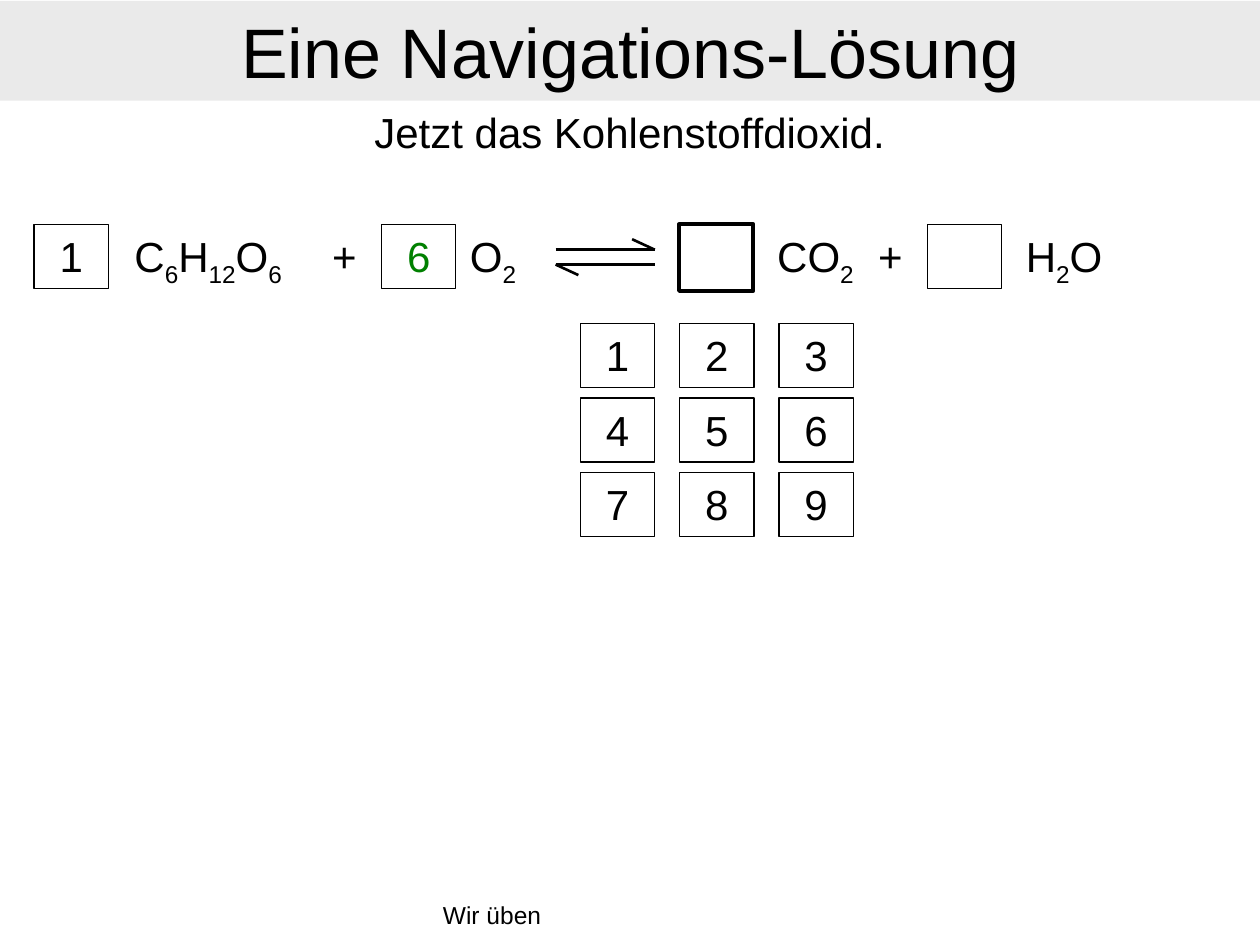
from dataclasses import dataclass
from itertools import groupby

from lxml import etree
from pptx import Presentation
from pptx.dml.color import RGBColor
from pptx.enum import shapes as sh, text as tx
from pptx.oxml import ns
from pptx.util import Pt


@dataclass(frozen=True)
class Theme:
    font: str = "Arial"
    ink: RGBColor = RGBColor(0, 0, 0)
    band: RGBColor = RGBColor(0xEA, 0xEA, 0xEA)
    right: RGBColor = RGBColor(0, 0x80, 0)
    head: int = 40
    body: int = 24
    foot: int = 14
    thin: float = 0.75
    arrow: float = 1.5
    bold: float = 2.25


THEME = Theme()
CELL_W, CELL_H = 42.5, 36.5
STEP_X, STEP_Y = 56.7, 42.5
CENTER, LEFT = tx.PP_ALIGN.CENTER, tx.PP_ALIGN.LEFT


def place(shape, box):
    shape.left, shape.top, shape.width, shape.height = map(Pt, box)


def style(frame, size, color=THEME.ink, align=CENTER):
    for par in frame.paragraphs:
        par.alignment = align
        for run in par.runs:
            run.font.name = THEME.font
            run.font.size = Pt(size)
            run.font.color.rgb = color


def add_text(slide, box, words, size=THEME.body, align=CENTER):
    frame = slide.shapes.add_textbox(*map(Pt, box)).text_frame
    frame.word_wrap = True
    frame.text = words
    style(frame, size, align=align)


def add_term(slide, box, term):
    """Write a chemical formula with its digits as subscripts."""
    frame = slide.shapes.add_textbox(*map(Pt, box)).text_frame
    frame.word_wrap = True
    for low, chars in groupby(term, str.isdigit):
        run = frame.paragraphs[0].add_run()
        run.text = "".join(chars)
        if low:
            run.font._element.set("baseline", "-25000")
    style(frame, THEME.body)


def add_cell(slide, box, digit="", color=THEME.ink, line=THEME.thin):
    cell = slide.shapes.add_shape(sh.MSO_SHAPE.RECTANGLE, *map(Pt, box))
    cell.shadow.inherit = False
    cell.fill.background()
    cell.line.color.rgb = THEME.ink
    cell.line.width = Pt(line)
    frame = cell.text_frame
    frame.vertical_anchor = tx.MSO_ANCHOR.TOP
    frame.text = digit
    style(frame, THEME.body, color)


def add_title(slide, box, words):
    title = slide.shapes.title
    place(title, box)
    title.fill.solid()
    title.fill.fore_color.rgb = THEME.band
    frame = title.text_frame
    frame.auto_size = tx.MSO_AUTO_SIZE.NONE
    frame.vertical_anchor = tx.MSO_ANCHOR.MIDDLE
    frame.text = words
    style(frame, THEME.head)


def add_arrows(slide, box):
    """Draw the two half arrows of a chemical equilibrium."""
    x, y, w, h = box
    barb, rise, end = 13, 6, x + w
    group = slide.shapes.add_group_shape()
    for ends in (
        (x, y + rise, end, y + rise),
        (end, y + rise, end - barb, y),
        (end, y + h - rise, x, y + h - rise),
        (x, y + h - rise, x + barb, y + h),
    ):
        line = group.shapes.add_connector(sh.MSO_CONNECTOR.STRAIGHT, *map(Pt, ends))
        line.line.color.rgb = THEME.ink
        line.line.width = Pt(THEME.arrow)
        etree.SubElement(line._element.spPr, ns.qn("a:effectLst"))


def add_sum(slide, box):
    """Lay out the reaction equation with its coefficient cells."""
    x, y, _, h = box
    for dx, digit, color, line, grow in (
        (0, "1", THEME.ink, THEME.thin, 0),
        (198.5, "6", THEME.right, THEME.thin, 0),
        (368.5, "", THEME.ink, THEME.bold, 1.5),
        (510.5, "", THEME.ink, THEME.thin, 0),
    ):
        add_cell(slide, (x + dx, y, CELL_W, h + grow), digit, color, line)
    for dx, w, term in (
        (43, 113, "C6H12O6"),
        (156, CELL_W, "+"),
        (241, CELL_W, "O2"),
        (411, 71, "CO2"),
        (468, CELL_W, "+"),
        (553, 71, "H2O"),
    ):
        add_term(slide, (x + dx, y, w, h), term)
    add_arrows(slide, (x + 298, y + 8.5, STEP_X, 20.5))


def add_keys(slide, box):
    """Lay out the digits 1 to 9 in three rows of three."""
    x, y = box[:2]
    for i in range(9):
        row, col = divmod(i, 3)
        spot = (x + col * STEP_X, y + row * STEP_Y, CELL_W, CELL_H)
        add_cell(slide, spot, str(i + 1))


def main():
    deck = Presentation()
    deck.slide_width, deck.slide_height = Pt(720), Pt(540)
    slide = deck.slides.add_slide(deck.slide_layouts[5])
    add_title(slide, (0, 0.5, 720, 57), "Eine Navigations-Lösung")
    add_text(slide, (19.5, 57.5, 680.5, 36), "Jetzt das Kohlenstoffdioxid.")
    add_sum(slide, (19.5, 128.2, 624, CELL_H))
    add_keys(slide, (331.7, 185, 156, 121.5))
    add_text(slide, (246, 511, 228, 28), "Wir üben", THEME.foot, LEFT)
    deck.save("out.pptx")


if __name__ == "__main__":
    main()
